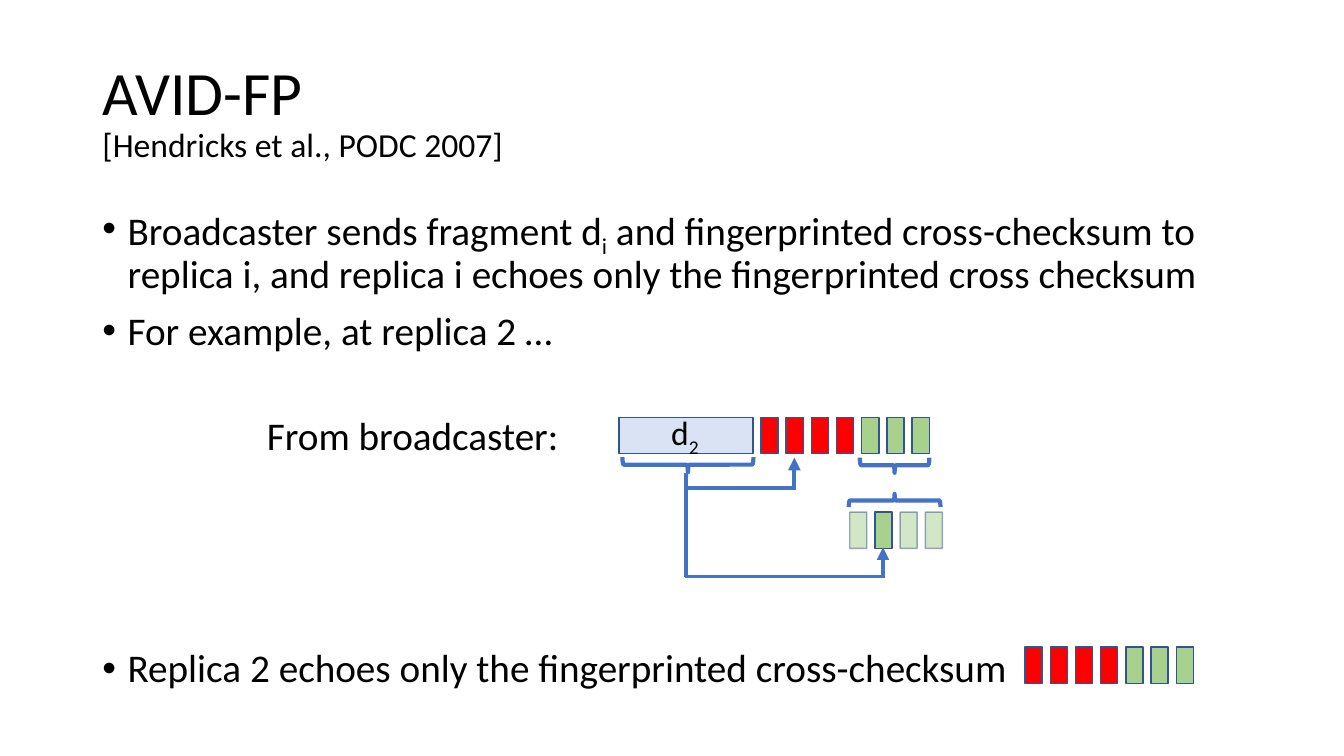
from lxml import etree
from pptx import Presentation
from pptx.dml.color import RGBColor
from pptx.enum.shapes import MSO_CONNECTOR, MSO_SHAPE
from pptx.enum.text import MSO_ANCHOR, MSO_AUTO_SIZE, PP_ALIGN
from pptx.oxml.ns import qn
from pptx.util import Pt

RECTANGLE, BRACE = MSO_SHAPE.RECTANGLE, MSO_SHAPE.LEFT_BRACE
STRAIGHT = MSO_CONNECTOR.STRAIGHT
LEFT, TOP, MIDDLE = PP_ALIGN.LEFT, MSO_ANCHOR.TOP, MSO_ANCHOR.MIDDLE
NO_FIT = MSO_AUTO_SIZE.NONE

FONT = "Calibri"
BLACK, BLUE, OUTLINE = "000000", "4472C4", "325491"
PALE_BLUE, RED, GREEN = "DAE3F3", "FF0000", "A9D18E"
BAR_WIDTH, BAR_HEIGHT, BAR_PITCH = 12.2, 25.9, 18
CHECKSUM = [RED] * 4 + [GREEN] * 3


def color(hex_string):
    return RGBColor.from_string(hex_string)


def add_text(paragraph, text, size=28, subscript=False):
    run = paragraph.add_run()
    run.text = text
    run.font.name, run.font.size = FONT, Pt(size)
    run.font.color.rgb = color(BLACK)
    if subscript:
        run.font._element.set("baseline", "-25000")


def place(shape, left, top, width, height):
    shape.left, shape.top = Pt(left), Pt(top)
    shape.width, shape.height = Pt(width), Pt(height)


def set_alpha(fill_format, percent):
    for solid in fill_format.iter(qn("a:srgbClr")):
        etree.SubElement(solid, qn("a:alpha")).set("val", str(percent * 1000))


def add_bar(slide, left, top, fill, width=BAR_WIDTH, faded=False):
    bar = slide.shapes.add_shape(RECTANGLE, Pt(left), Pt(top), Pt(width), Pt(BAR_HEIGHT))
    bar.shadow.inherit = False
    bar.fill.solid()
    bar.fill.fore_color.rgb = color(fill)
    bar.line.color.rgb = color(OUTLINE)
    bar.line.width = Pt(1)
    if faded:
        set_alpha(bar._element.spPr, 50)


def add_checksum(slide, left, top):
    for index, fill in enumerate(CHECKSUM):
        add_bar(slide, left + index * BAR_PITCH, top, fill)


def add_brace(slide, center_x, center_y, length, depth, rotation):
    brace = slide.shapes.add_shape(BRACE, Pt(center_x - depth / 2), Pt(center_y - length / 2),
                                   Pt(depth), Pt(length))
    brace.rotation = rotation
    brace.adjustments[0], brace.adjustments[1] = 0.083, 0.5
    brace.shadow.inherit = False
    brace.fill.background()
    brace.line.color.rgb = color(BLUE)
    brace.line.width = Pt(3)


def add_line(slide, start, end, width=3, arrow=False):
    line = slide.shapes.add_connector(STRAIGHT, *(Pt(value) for value in start + end))
    line.line.color.rgb = color(BLUE)
    line.line.width = Pt(width)
    if arrow:
        etree.SubElement(line.line._get_or_add_ln(), qn("a:tailEnd")).set("type", "triangle")
    etree.SubElement(line._element.spPr, qn("a:effectLst"))


def add_label(slide, left, top, width, height, parts, size):
    box = slide.shapes.add_textbox(Pt(left), Pt(top), Pt(width), Pt(height))
    box.text_frame.word_wrap = False
    for text, subscript in parts:
        add_text(box.text_frame.paragraphs[0], text, size=size, subscript=subscript)


def fill_title(slide, left, top, width, height):
    title = slide.shapes.title
    place(title, left, top, width, height)
    title.text_frame.auto_size = NO_FIT
    title.text_frame.vertical_anchor = MIDDLE
    paragraph = title.text_frame.paragraphs[0]
    paragraph.alignment, paragraph.line_spacing = LEFT, 0.9
    add_text(paragraph, "AVID-FP", size=44)
    paragraph.add_line_break()
    add_text(paragraph, "[Hendricks et al., PODC 2007]", size=24)


def fill_body(slide, left, top, width, height):
    body = slide.placeholders[1]
    place(body, left, top, width, height)
    frame = body.text_frame
    frame.auto_size, frame.vertical_anchor = NO_FIT, TOP
    # The large space before the last bullet leaves room for the diagram
    bullets = [
        (10, [("Broadcaster sends fragment d", False), ("i", True),
              (" and fingerprinted cross-checksum to replica i, and replica i "
               "echoes only the fingerprinted cross checksum", False)]),
        (10, [("For example, at replica 2 …", False)]),
        (211, [("Replica 2 echoes only the fingerprinted cross-checksum", False)]),
    ]
    for index, (space, parts) in enumerate(bullets):
        paragraph = frame.add_paragraph() if index else frame.paragraphs[0]
        paragraph.line_spacing, paragraph.space_before = 0.9, Pt(space)
        properties = paragraph._p.get_or_add_pPr()
        properties.set("marL", str(Pt(18)))
        properties.set("indent", str(-Pt(18)))
        etree.SubElement(properties, qn("a:buFont")).set("typeface", "Arial")
        etree.SubElement(properties, qn("a:buChar")).set("char", "•")
        for text, subscript in parts:
            add_text(paragraph, text, subscript=subscript)


def draw_message(slide, left, top):
    # Fragment and its fingerprinted cross-checksum
    add_bar(slide, left, top, PALE_BLUE, width=95.8)
    add_label(slide, left + 30.2, top - 7.2, 35.3, 36, [("d", False), ("2", True)], 24)
    add_checksum(slide, left + 101.5, top)
    add_label(slide, left - 258.5, top - 8, 225.4, 41, [("From broadcaster:", False)], 28)

    # Fingerprints of all fragments, with that of replica 2 in full colour
    for index in range(4):
        add_bar(slide, left + 164.9 + index * BAR_PITCH, top + 67.7, GREEN, faded=index != 1)

    # Braces
    add_brace(slide, left + 49.3, top + 33.8, 93.6, 10.8, 270)
    add_brace(slide, left + 196.9, top + 34.2, 49.7, 10.8, 270)
    add_brace(slide, left + 196.9, top + 59.4, 65.5, 9.4, 90)

    # Arrows from the fragment to its checksum and its fingerprint
    stem = left + 48.2
    add_line(slide, (stem, top + 39.6), (stem, top + 113.7))
    for target, turn, tip in ((left + 125.3, top + 50.4, top + 28.8),
                              (left + 188.6, top + 113.7, top + 92.9)):
        add_line(slide, (target + 1.2, turn), (stem - 1, turn), width=2.5)
        add_line(slide, (target, turn), (target, tip), arrow=True)


def main():
    presentation = Presentation()
    presentation.slide_width, presentation.slide_height = Pt(960), Pt(540)
    slide = presentation.slides.add_slide(presentation.slide_layouts[1])
    fill_title(slide, 66, 28.8, 828, 104.4)
    fill_body(slide, 66, 144, 828, 360)
    draw_message(slide, 442.1, 298.1)
    add_checksum(slide, 732.2, 462.2)
    presentation.save("out.pptx")


if __name__ == "__main__":
    main()
